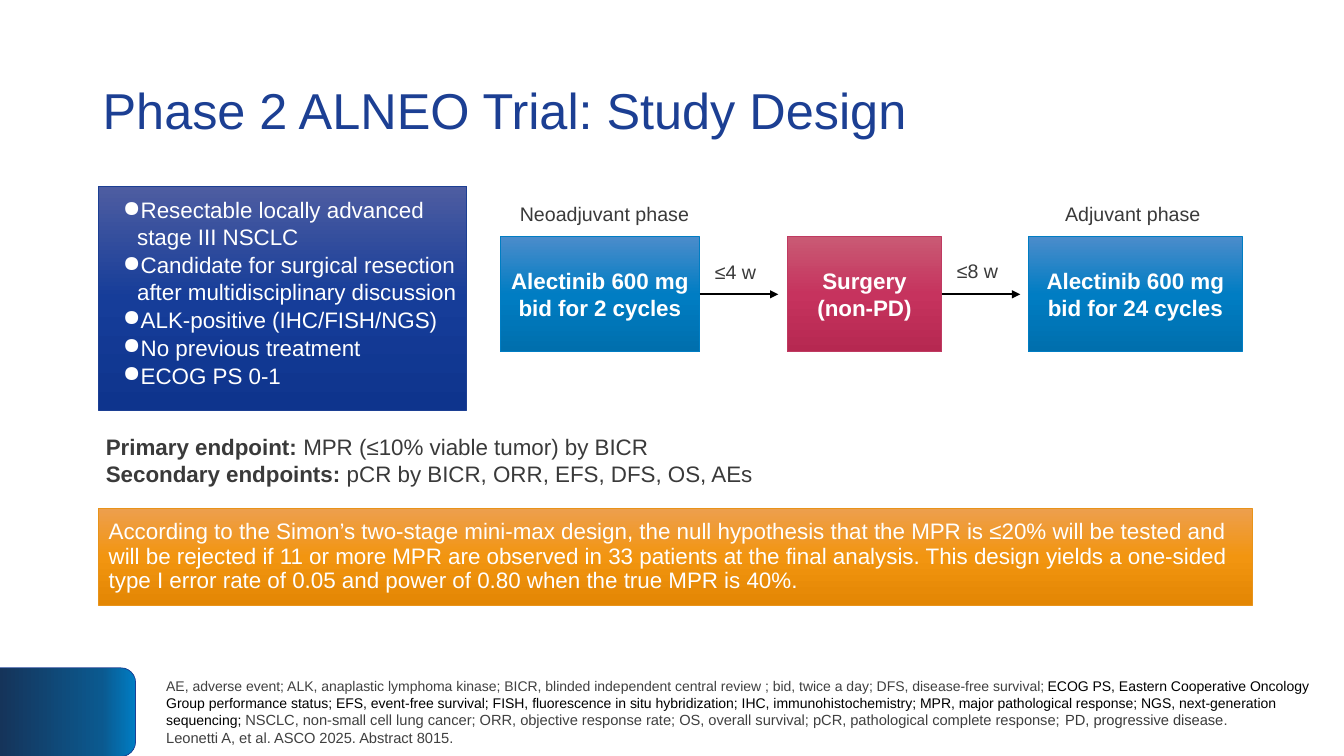
from copy import deepcopy

from lxml.etree import SubElement
from pptx import Presentation
from pptx.dml.color import RGBColor
from pptx.enum.shapes import MSO_CONNECTOR, MSO_SHAPE
from pptx.enum.text import MSO_ANCHOR, PP_ALIGN
from pptx.oxml.ns import qn
from pptx.util import Inches, Pt

NAVY = RGBColor(0x1C, 0x3F, 0x93)
BLUE = RGBColor(0x00, 0x7D, 0xC3)
ROSE = RGBColor(0xBF, 0x3A, 0x61)
ORANGE = RGBColor(0xE8, 0x93, 0x1A)
WHITE = RGBColor(0xFF, 0xFF, 0xFF)
BLACK = RGBColor(0x00, 0x00, 0x00)
TEXT = RGBColor(0x3A, 0x3A, 0x3A)
GRAY = RGBColor(0x40, 0x40, 0x40)

CORNER_STOPS = [(0, BLUE), (0.25, RGBColor(0x0B, 0x59, 0x8F)), (1, RGBColor(0x15, 0x34, 0x5A))]
NAVY_STOPS = [(0, RGBColor(0x4E, 0x5D, 0xA1)), (0.5, RGBColor(0x16, 0x3D, 0x99)),
              (1, RGBColor(0x0E, 0x34, 0x8D))]
BLUE_STOPS = [(0, RGBColor(0x4B, 0x8C, 0xCB)), (0.5, BLUE), (1, RGBColor(0x00, 0x6F, 0xAD))]
ROSE_STOPS = [(0, RGBColor(0xC9, 0x5A, 0x74)), (0.5, RGBColor(0xC6, 0x33, 0x5E)),
              (1, RGBColor(0xB6, 0x28, 0x51))]
ORANGE_STOPS = [(0, RGBColor(0xED, 0x9F, 0x4E)), (0.5, RGBColor(0xF2, 0x95, 0x10)),
                (1, RGBColor(0xE3, 0x86, 0x03))]

deck = Presentation()
deck.slide_width = Inches(13.33)
deck.slide_height = Inches(7.5)
page = deck.slides.add_slide(deck.slide_layouts[6])


def add_gradient_box(kind, left, top, width, height, stops, line_color):
    """Add a shape with a three-stop gradient running from top to bottom."""
    box = page.shapes.add_shape(kind, Inches(left), Inches(top), Inches(width), Inches(height))
    box.shadow.inherit = False
    box.fill.gradient()
    box.fill.gradient_angle = 270
    stop_list = box.element.spPr.find(qn("a:gradFill")).find(qn("a:gsLst"))
    stop_list.insert(1, deepcopy(stop_list[0]))
    for stop, (position, color) in zip(box.fill.gradient_stops, stops):
        stop.position = position
        stop.color.rgb = color
    box.line.color.rgb = line_color
    box.line.width = Pt(0.5)
    box.text_frame.word_wrap = True
    return box


def style(para, size, color, align=PP_ALIGN.LEFT, bold=False):
    para.alignment = align
    para.font.name = "Arial"
    para.font.size = Pt(size)
    para.font.color.rgb = color
    para.font.bold = bold


corner = add_gradient_box(MSO_SHAPE.ROUND_2_SAME_RECTANGLE, 0.23, 6.39, 0.88, 1.35,
                          CORNER_STOPS, NAVY)
corner.rotation = 90

title = page.shapes.add_textbox(Inches(0.92), Inches(0.4), Inches(11.5), Inches(1.45))
title.text_frame.word_wrap = True
title.text_frame.vertical_anchor = MSO_ANCHOR.MIDDLE
para = title.text_frame.paragraphs[0]
para.text = "Phase 2 ALNEO Trial: Study Design"
para.line_spacing = 0.9
style(para, 36, NAVY)

# Eligibility criteria
criteria = [
    "Resectable locally advanced stage III NSCLC",
    "Candidate for surgical resection after multidisciplinary discussion",
    "ALK-positive (IHC/FISH/NGS)",
    "No previous treatment",
    "ECOG PS 0-1",
]
eligibility = add_gradient_box(MSO_SHAPE.RECTANGLE, 0.98, 1.85, 3.65, 2.22, NAVY_STOPS, NAVY)
frame = eligibility.text_frame
frame.vertical_anchor = MSO_ANCHOR.TOP
frame.margin_left = frame.margin_right = frame.margin_bottom = 0
frame.margin_top = Inches(0.1)
for index, criterion in enumerate(criteria):
    para = frame.add_paragraph() if index else frame.paragraphs[0]
    para.text = criterion
    properties = para._p.get_or_add_pPr()
    properties.set("marL", str(Inches(0.38)))
    properties.set("indent", str(Inches(-0.14)))
    bullet_color = SubElement(properties, qn("a:buClr"))
    SubElement(bullet_color, qn("a:srgbClr"), val=str(WHITE))
    SubElement(properties, qn("a:buChar"), char="●")
    if index:
        para.space_before = Pt(0.8)
    style(para, 16, WHITE)

# Treatment flow
steps = [
    ("Alectinib 600 mg bid for 2 cycles", 4.96, 1.98, BLUE_STOPS, BLUE),
    ("Surgery\n(non-PD)", 7.81, 1.53, ROSE_STOPS, ROSE),
    ("Alectinib 600 mg bid for 24 cycles", 10.2, 2.12, BLUE_STOPS, BLUE),
]
step_boxes = []
for text, left, width, stops, line_color in steps:
    box = add_gradient_box(MSO_SHAPE.RECTANGLE, left, 2.35, width, 1.14, stops, line_color)
    box.text_frame.vertical_anchor = MSO_ANCHOR.MIDDLE
    para = box.text_frame.paragraphs[0]
    para.text = text
    style(para, 16, WHITE, PP_ALIGN.CENTER, True)
    step_boxes.append(box)

for box in step_boxes[:-1]:
    start = box.left + box.width
    middle = box.top + box.height // 2
    arrow = page.shapes.add_connector(MSO_CONNECTOR.STRAIGHT, start, middle,
                                      start + Inches(0.78), middle)
    arrow.begin_connect(box, 3)
    arrow.line.color.rgb = BLACK
    arrow.line.width = Pt(1.5)
    SubElement(arrow.line._get_or_add_ln(), qn("a:tailEnd"), type="triangle")
    SubElement(arrow.element.spPr, qn("a:effectLst"))

labels = [
    ("Neoadjuvant phase", 5.05, 1.95, 1.89),
    ("≤4 w", 6.99, 2.53, 0.61),
    ("≤8 w", 9.39, 2.52, 0.61),
    ("Adjuvant phase", 10.29, 1.95, 1.89),
]
for text, left, top, width in labels:
    label = page.shapes.add_textbox(Inches(left), Inches(top), Inches(width), Inches(0.34))
    label.text_frame.word_wrap = False
    para = label.text_frame.paragraphs[0]
    para.text = text
    style(para, 14, TEXT, PP_ALIGN.CENTER)

# Endpoints
endpoints = [
    ("Primary endpoint: ", "MPR (≤10% viable tumor) by BICR"),
    ("Secondary endpoints: ", "pCR by BICR, ORR, EFS, DFS, OS, AEs"),
]
endpoint_box = page.shapes.add_textbox(Inches(0.92), Inches(4.17), Inches(8.7), Inches(0.97))
frame = endpoint_box.text_frame
frame.word_wrap = True
frame.margin_left = frame.margin_right = frame.margin_top = frame.margin_bottom = Inches(0.13)
for index, (heading, measures) in enumerate(endpoints):
    para = frame.add_paragraph() if index else frame.paragraphs[0]
    style(para, 16, TEXT)
    for text, bold in ((heading, True), (measures, False)):
        span = para.add_run()
        span.text = text
        span.font.bold = bold

# Statistical design
statistics = add_gradient_box(MSO_SHAPE.RECTANGLE, 0.98, 5.04, 11.44, 0.97, ORANGE_STOPS, ORANGE)
statistics.text_frame.vertical_anchor = MSO_ANCHOR.MIDDLE
para = statistics.text_frame.paragraphs[0]
para.text = (
    "According to the Simon’s two-stage mini-max design, the null hypothesis that the MPR is "
    "≤20% will be tested and will be rejected if 11 or more MPR are observed in 33 patients at "
    "the final analysis. This design yields a one-sided type I error rate of 0.05 and power of "
    "0.80 when the true MPR is 40%."
)
para.line_spacing = 0.9
style(para, 16, WHITE)

# Abbreviations and citation
abbreviations = [
    ("AE, adverse event; ALK, anaplastic lymphoma kinase; BICR, blinded independent central "
     "review ; bid, twice a day; DFS, disease-free survival; ", 10, GRAY),
    ("ECOG PS, Eastern Cooperative Oncology Group performance status; EFS, event-free survival; "
     "FISH, fluorescence in situ hybridization; IHC, immunohistochemistry; MPR, major "
     "pathological response; NGS, next-generation sequencing; ", 10, BLACK),
    ("NSCLC, non-small cell lung cancer; ORR, objective response rate; OS, overall survival; "
     "pCR, pathological complete response; ", 10.5, GRAY),
    ("PD, progressive disease", 10.5, TEXT),
    (".", 10.5, GRAY),
]
footnote = page.shapes.add_textbox(Inches(1.55), Inches(6.62), Inches(11.65), Inches(0.88))
frame = footnote.text_frame
frame.word_wrap = True
frame.vertical_anchor = MSO_ANCHOR.MIDDLE
para = frame.paragraphs[0]
style(para, 10, GRAY)
for text, size, color in abbreviations:
    span = para.add_run()
    span.text = text
    span.font.size = Pt(size)
    span.font.color.rgb = color
citation = frame.add_paragraph()
citation.text = "Leonetti A, et al. ASCO 2025. Abstract 8015."
style(citation, 10.5, GRAY)

deck.save("out.pptx")
